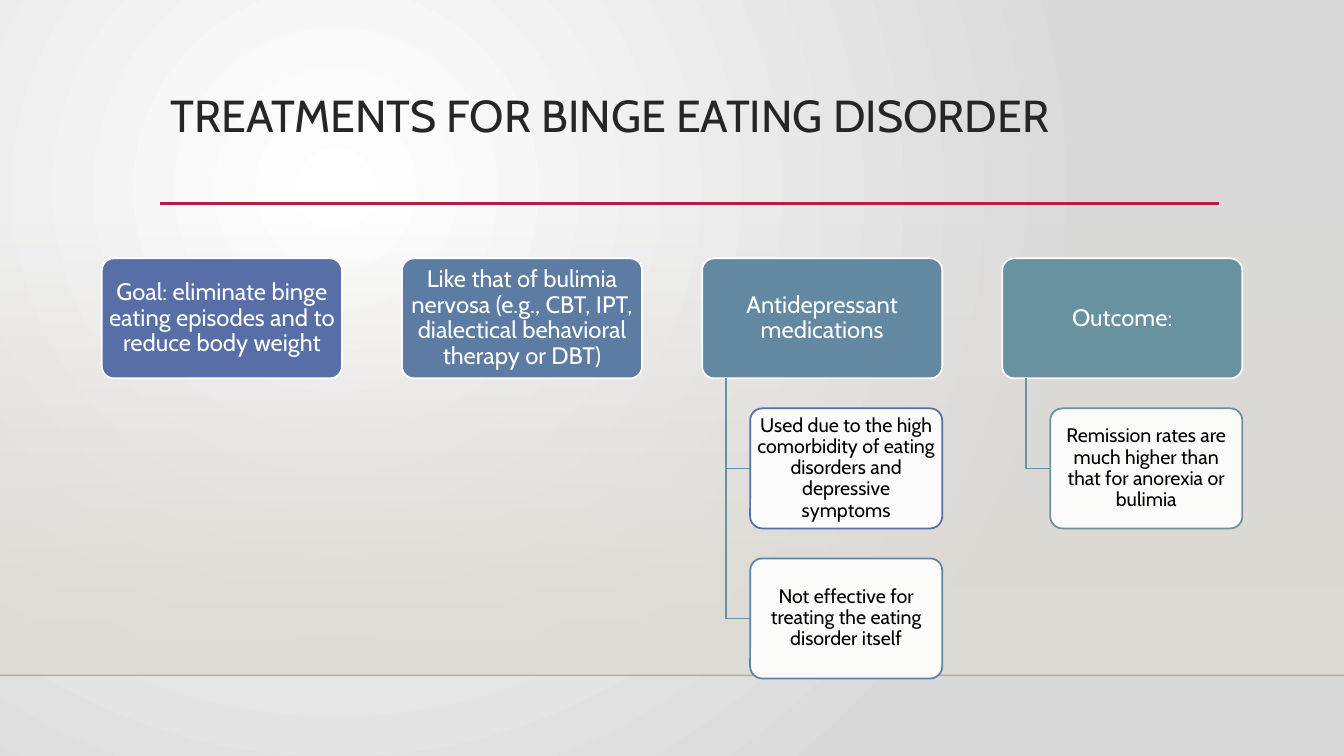
from lxml.etree import SubElement
from pptx import Presentation
from pptx.dml.color import RGBColor
from pptx.enum.shapes import MSO_CONNECTOR, MSO_SHAPE
from pptx.enum.text import MSO_ANCHOR, MSO_AUTO_SIZE, PP_ALIGN
from pptx.oxml.ns import qn
from pptx.util import Pt

COLORS = {
    "white": "FFFFFF", "grey": "D9D9D9", "sand": "DFDBD5", "black": "000000",
    "title": "262626", "red": "B71E42", "indigo": "586EA6", "blue": "5D7CA4",
    "mid blue": "6083A3", "steel": "6388A2", "teal": "6892A0",
}
RGB = {name: RGBColor.from_string(value) for name, value in COLORS.items()}


def set_text(shape, text, size, color, align, frame_format):
    frame = shape.text_frame
    frame.text = text
    for name, value in frame_format.items():
        setattr(frame, name, value)
    paragraph = frame.paragraphs[0]
    paragraph.alignment = align
    paragraph.line_spacing = 0.9
    font_format = {"name": "Cabin", "size": Pt(size), "bold": False}
    for name, value in font_format.items():
        setattr(paragraph.font, name, value)
    paragraph.font.color.rgb = RGB[color]


def set_alpha(color_parent, percent):
    color = next(color_parent.iter(qn("a:srgbClr")))
    SubElement(color, qn("a:alpha"), val=str(percent * 1000))


prs = Presentation()
prs.slide_width, prs.slide_height = Pt(960), Pt(540)
slide = prs.slides.add_slide(prs.slide_layouts[5])
shapes = slide.shapes

# Background: circular glow centred up and to the left
glow = slide.background.fill
glow.gradient()
for stop, color in zip(glow.gradient_stops, ("white", "grey")):
    stop.color.rgb = RGB[color]
glow_xml = next(slide.element.iter(qn("a:gradFill")))
glow_xml.remove(glow_xml.find(qn("a:lin")))
glow_path = SubElement(glow_xml, qn("a:path"), {"path": "circle"})
SubElement(glow_path, qn("a:fillToRect"), l="50000", t="50000", r="100000", b="100000")

# Sand band fading in towards the floor line
band = shapes.add_shape(MSO_SHAPE.RECTANGLE, 0, Pt(159), Pt(960), Pt(323.4))
band.shadow.inherit = False
band.line.fill.background()
band.fill.gradient()
band.fill.gradient_angle = 270
for stop in band.fill.gradient_stops:
    stop.color.rgb = RGB["sand"]
set_alpha(next(band.element.iter(qn("a:gs"))), 0)

# Floor line and title rule: left, right, y, colour, width, opacity
for left, right, y, color, width, opacity in (
    (0, 960, 482.4, "black", 1, 20),
    (114.5, 871, 145.4, "red", 2.5, 100),
):
    rule = shapes.add_connector(MSO_CONNECTOR.STRAIGHT, Pt(left), Pt(y), Pt(right), Pt(y))
    rule.line.color.rgb = RGB[color]
    rule.line.width = Pt(width)
    if opacity < 100:
        set_alpha(rule.element.spPr, opacity)
    SubElement(rule.element.spPr, qn("a:effectLst"))

# Title
title = shapes.title
title_place = {"left": Pt(114.5), "top": Pt(63.4), "width": Pt(756), "height": Pt(82.8)}
for name, value in title_place.items():
    setattr(title, name, value)
set_text(title, "TREATMENTS FOR BINGE EATING DISORDER", 32, "title", PP_ALIGN.LEFT,
         {"vertical_anchor": MSO_ANCHOR.TOP, "auto_size": MSO_AUTO_SIZE.NONE,
          "word_wrap": True})

# Treatment columns: heading, fill, details with their border colours
columns = [
    ("Goal: eliminate binge eating episodes and to reduce body weight", "indigo", []),
    ("Like that of bulimia nervosa (e.g., CBT, IPT, dialectical behavioral therapy or DBT)",
     "blue", []),
    ("Antidepressant medications", "steel", [
        ("Used due to the high comorbidity of eating disorders and depressive symptoms",
         "indigo"),
        ("Not effective for treating the eating disorder itself", "mid blue"),
    ]),
    ("Outcome:", "teal", [
        ("Remission rates are much higher than that for anorexia or bulimia", "teal"),
    ]),
]
LEFT, TOP, WIDTH = 72.8, 184.5, 171.5
HEIGHT = WIDTH / 2
PITCH_X, PITCH_Y = 1.25 * WIDTH, 1.25 * HEIGHT
INDENT = 0.2 * WIDTH

for column, (heading, heading_fill, details) in enumerate(columns):
    column_left = LEFT + column * PITCH_X
    cards = [(heading, heading_fill, "white", "white", 17, 0)]
    cards += [(text, "white", border, "black", 14, INDENT) for text, border in details]

    for row, (text, fill, border, ink, size, indent) in enumerate(cards):
        card_left, card_top = column_left + indent, TOP + row * PITCH_Y

        # Elbow from the heading down to a detail card
        if row:
            stem, middle = Pt(column_left + INDENT / 2), Pt(card_top + HEIGHT / 2)
            outline = shapes.build_freeform(stem, Pt(TOP + HEIGHT))
            outline.add_line_segments([(stem, middle), (Pt(card_left), middle)], close=False)
            elbow = outline.convert_to_shape()
            elbow.shadow.inherit = False
            elbow.fill.background()
            elbow.line.color.rgb = RGB["teal"]
            elbow.line.width = Pt(1.25)

        card = shapes.add_shape(MSO_SHAPE.ROUNDED_RECTANGLE, Pt(card_left), Pt(card_top),
                                Pt(WIDTH - indent), Pt(HEIGHT))
        card.adjustments[0] = 0.1
        card.shadow.inherit = False
        card.fill.solid()
        card.fill.fore_color.rgb = RGB[fill]
        if row:
            set_alpha(card.element.spPr, 90)
        card.line.color.rgb = RGB[border]
        card.line.width = Pt(1.25)
        side, edge = Pt(0.15 * size), Pt(0.1 * size)
        set_text(card, text, size, ink, PP_ALIGN.CENTER,
                 {"margin_left": side, "margin_right": side, "margin_top": edge,
                  "margin_bottom": edge, "vertical_anchor": MSO_ANCHOR.MIDDLE,
                  "word_wrap": True})

prs.save("out.pptx")
